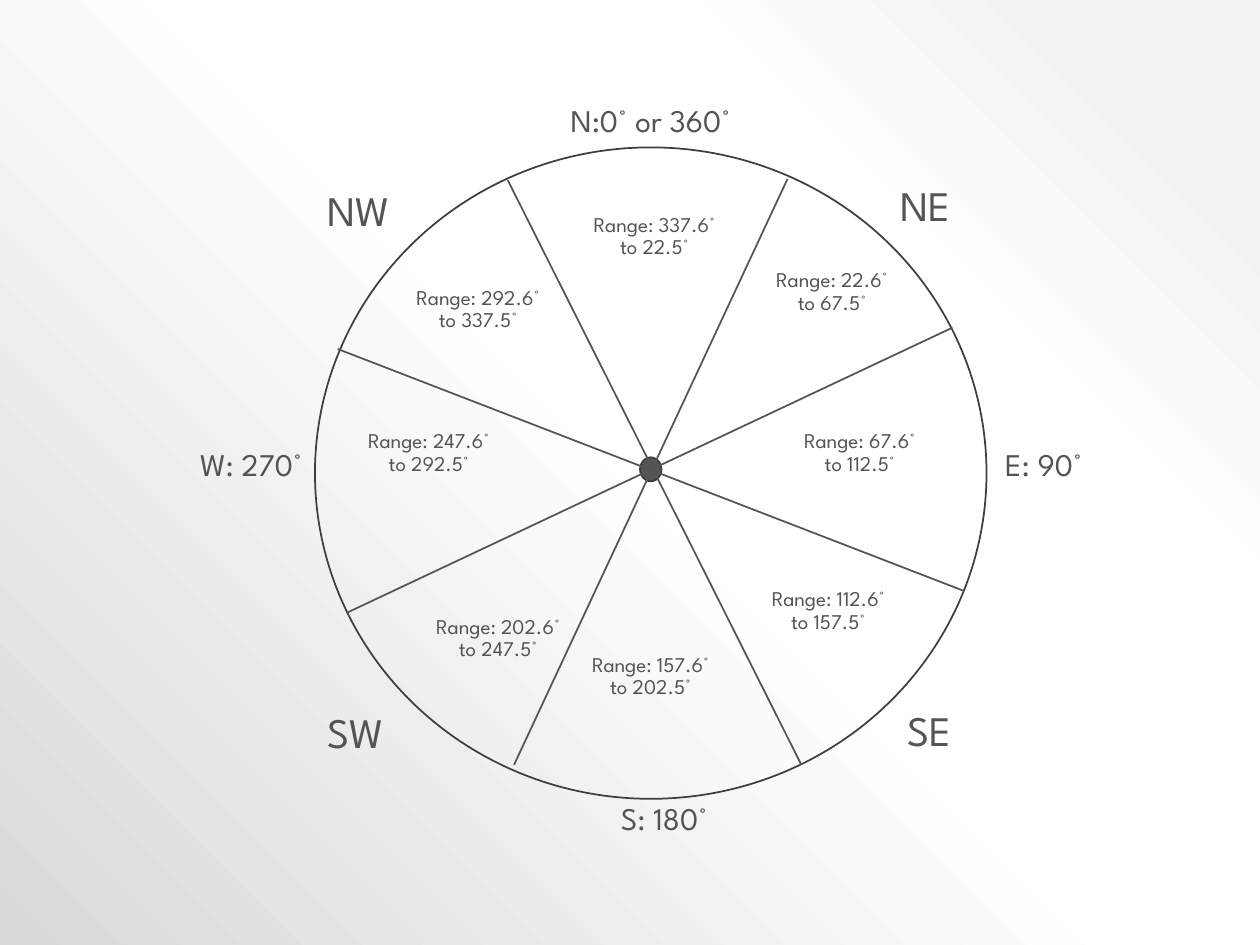
import lxml.etree
import pptx
import pptx.dml.color
import pptx.enum.shapes
import pptx.enum.text
import pptx.oxml.ns
import pptx.util
from pptx.util import Inches

COLOURS = {"text": "545454", "outline": "3E3E3E", "pale": "F2F2F2", "white": "FFFFFF", "grey": "D9D9D9"}
ALIGN = pptx.enum.text.PP_ALIGN


def rgb(name):
    return pptx.dml.color.RGBColor.from_string(COLOURS[name])


def add_xml(parent, tag, **attributes):
    return lxml.etree.SubElement(parent, pptx.oxml.ns.qn(tag), **attributes)


def write_text(frame, text, size=12, align=ALIGN.CENTER, font="League Spartan", colour="text"):
    para = frame.paragraphs[0]
    para.alignment = align
    para.line_spacing = 0.9
    span = para.add_run()
    span.text = text
    span.font.name = font
    span.font.size = pptx.util.Pt(size)
    span.font.color.rgb = rgb(colour)


class CompassSlide:
    line_width = pptx.util.Pt(1)

    def __init__(self, page):
        self.page = page

    def background(self, stops):
        fill = self.page.background.fill
        fill.gradient()
        gradient = self.page.element.find(".//" + pptx.oxml.ns.qn("a:gradFill"))
        for child in list(gradient):
            gradient.remove(child)
        stop_list = add_xml(gradient, "a:gsLst")
        for percent, colour in stops:
            stop = add_xml(stop_list, "a:gs", pos=str(percent * 1000))
            add_xml(stop, "a:srgbClr", val=COLOURS[colour])
        circle = add_xml(gradient, "a:path", path="circle")
        add_xml(circle, "a:fillToRect", l="100000", b="100000")

    def ellipse(self, left, top, width, height, fill=None):
        shape = self.page.shapes.add_shape(
            pptx.enum.shapes.MSO_SHAPE.OVAL, Inches(left), Inches(top), Inches(width), Inches(height))
        shape.shadow.inherit = False
        if fill:
            shape.fill.solid()
            shape.fill.fore_color.rgb = rgb(fill)
        else:
            shape.fill.background()
        shape.line.color.rgb = rgb("outline")
        shape.line.width = self.line_width

    def divider(self, start_x, start_y, end_x, end_y):
        line = self.page.shapes.add_connector(
            pptx.enum.shapes.MSO_CONNECTOR.STRAIGHT,
            Inches(start_x), Inches(start_y), Inches(end_x), Inches(end_y))
        line.line.color.rgb = rgb("text")
        line.line.width = self.line_width
        add_xml(line.element.spPr, "a:effectLst")

    def label(self, text, left, top, width, height, **text_format):
        box = self.page.shapes.add_textbox(Inches(left), Inches(top), Inches(width), Inches(height))
        frame = box.text_frame
        frame.word_wrap = True
        frame.auto_size = pptx.enum.text.MSO_AUTO_SIZE.SHAPE_TO_FIT_TEXT
        write_text(frame, text, **text_format)


def main():
    deck = pptx.Presentation()
    deck.slide_width, deck.slide_height = Inches(10), Inches(7.5)
    compass = CompassSlide(deck.slides.add_slide(deck.slide_layouts[6]))
    compass.background([(10, "pale"), (28, "white"), (48, "white"), (100, "grey")])
    compass.ellipse(2.5, 1.17, 5.33, 5.17)

    cardinals = [
        ("N:0° or 360°", 4.29, 0.79, 1.75, ALIGN.CENTER),
        ("E: 90°", 7.88, 3.52, 1, ALIGN.LEFT),
        ("S: 180°", 4.83, 6.33, 1.21, ALIGN.LEFT),
        ("W: 270°", 1.33, 3.52, 1.17, ALIGN.RIGHT),
    ]
    for text, left, top, width, align in cardinals:
        compass.label(text, left, top, width, 0.37, size=18, align=align)

    diagonals = [("NE", 7.05, 1.42), ("SE", 7.1, 5.59), ("SW", 2.5, 5.6), ("NW", 2.5, 1.46)]
    for text, left, top in diagonals:
        compass.label(text, left, top, 0.78, 0.46, size=24, align=ALIGN.LEFT)

    compass.ellipse(5.08, 3.63, 0.17, 0.19, fill="text")
    dividers = [
        (4.03, 1.43, 6.36, 6.07),
        (6.25, 1.42, 4.08, 6.07),
        (7.56, 2.6, 2.76, 4.86),
        (2.68, 2.77, 7.65, 4.69),
    ]
    for ends in dividers:
        compass.divider(*ends)

    ranges = [
        ("337.6° to 22.5°", 4.57, 1.65, 0.65),
        ("22.6° to 67.5°", 5.98, 2.09, 0.46),
        ("67.6° to 112.5°", 6.2, 3.37, 0.46),
        ("112.6° to 157.5°", 5.95, 4.62, 0.65),
        ("157.6° to 202.5°", 4.54, 5.14, 0.65),
        ("202.6° to 247.5°", 3.33, 4.84, 0.65),
        ("247.6° to 292.5°", 2.78, 3.37, 0.65),
        ("292.6° to 337.5°", 3.17, 2.23, 0.65),
    ]
    for degrees, left, top, height in ranges:
        compass.label(f"Range: {degrees}", left, top, 1.25, height)

    deck.save("out.pptx")


if __name__ == "__main__":
    main()
